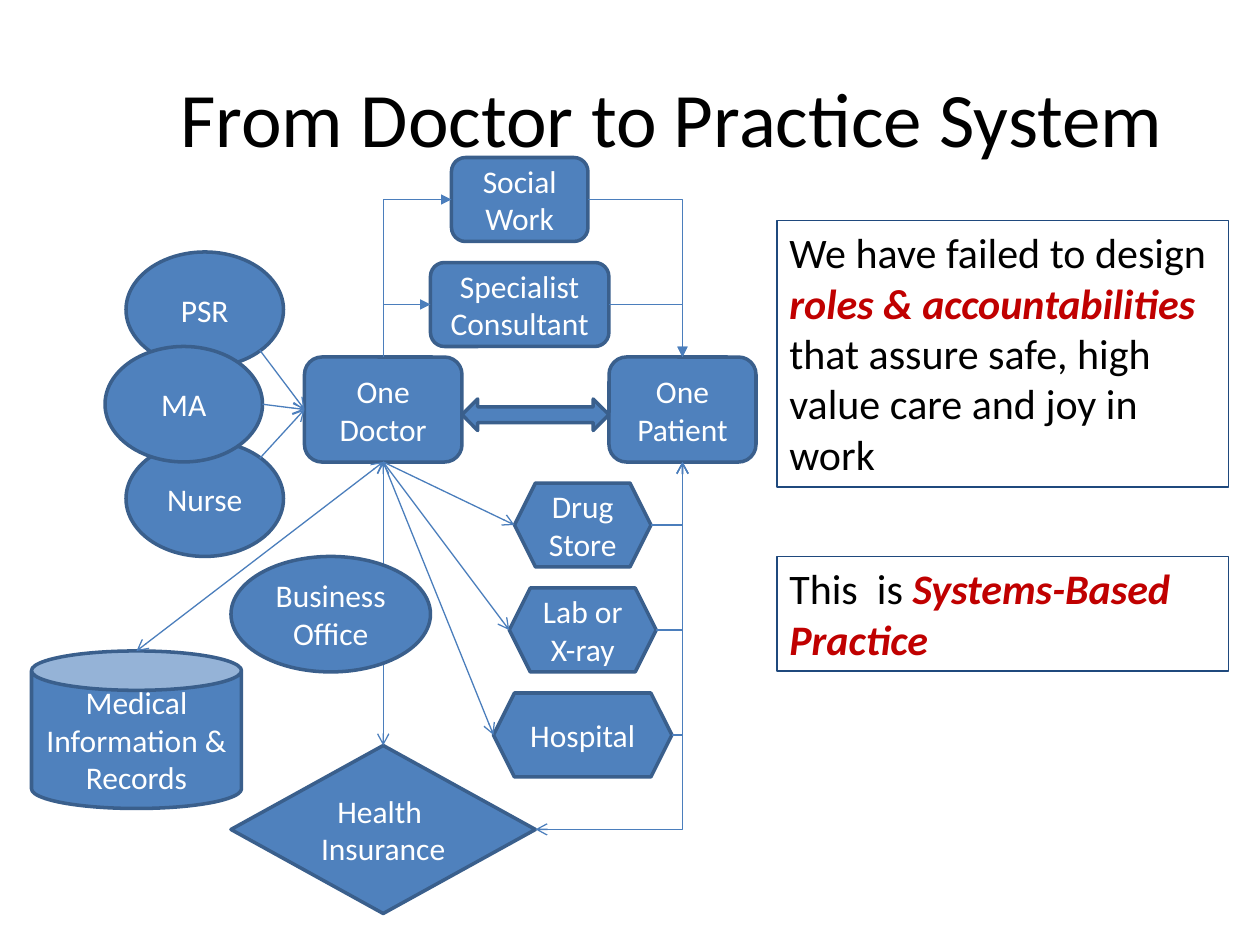
from lxml.etree import SubElement
from pptx import Presentation
from pptx.dml.color import RGBColor
from pptx.enum.shapes import MSO_CONNECTOR as Conn, MSO_SHAPE as Kind
from pptx.enum.text import MSO_ANCHOR as Anchor, PP_ALIGN as Align
from pptx.oxml.ns import qn
from pptx.util import Cm, Pt

FONT = "Calibri"
BLUE, EDGE, WIRE, NAVY = "4F81BD", "3A5F8C", "4B7EBC", "1F497D"
WHITE, BLACK, RED = "FFFFFF", "000000", "C00000"

# All places are left, top, width, height in twelfths of an inch
TITLE = ("From Doctor to Practice System", (10, 3.6, 108, 15))

NODES = {
    "One Doctor": (Kind.ROUNDED_RECTANGLE, 29, 34, 15, 10),
    "One Patient": (Kind.ROUNDED_RECTANGLE, 58, 34, 14, 10),
    "PSR": (Kind.OVAL, 12, 24, 15, 11),
    "Nurse": (Kind.OVAL, 12, 42, 15, 11),
    "MA": (Kind.OVAL, 10, 33, 15, 11),
    "Specialist Consultant": (Kind.ROUNDED_RECTANGLE, 41, 25, 17, 8),
    "Drug Store": (Kind.HEXAGON, 49, 46, 13, 8),
    "Lab or X-ray": (Kind.HEXAGON, 48.5, 56, 14, 8),
    "": (Kind.LEFT_RIGHT_ARROW, 44, 38, 14, 3),
    "Hospital": (Kind.HEXAGON, 47, 66, 17, 8),
    "Health  Insurance": (Kind.DIAMOND, 22, 71, 29, 16),
    "Medical Information & Records": (Kind.CAN, 3, 62, 20, 15),
    "Social Work": (Kind.ROUNDED_RECTANGLE, 43, 15, 13, 8),
    "Business Office": (Kind.OVAL, 22, 53, 19, 11),
}
FRONT = "Business Office"  # lies over the lines

# Side of a node as a share of its width and height
SIDES = {"left": (0, 0.5), "right": (1, 0.5), "top": (0.5, 0),
         "bottom": (0.5, 1), "upper": (0.85, 0.15), "lower": (0.85, 0.85)}

# From, side, to, side, arrowhead at start, arrowhead at end
STRAIGHT = [
    ("PSR", "lower", "One Doctor", "left", None, "arrow"),
    ("MA", "right", "One Doctor", "left", None, "arrow"),
    ("Nurse", "upper", "One Doctor", "left", None, "arrow"),
    ("One Doctor", "bottom", "Drug Store", "left", None, "arrow"),
    ("One Doctor", "bottom", "Lab or X-ray", "left", None, "arrow"),
    ("One Doctor", "bottom", "Hospital", "left", None, "arrow"),
    ("One Doctor", "bottom", "Health  Insurance", "top", "arrow", "arrow"),
    ("Medical Information & Records", "top", "One Doctor", "bottom",
     "arrow", "arrow"),
]
# These run level first, then upright
BENT = [
    ("Drug Store", "right", "One Patient", "bottom", None, "arrow"),
    ("Lab or X-ray", "right", "One Patient", "bottom", None, "arrow"),
    ("Hospital", "right", "One Patient", "bottom", None, "arrow"),
    ("Health  Insurance", "right", "One Patient", "bottom", "arrow", "arrow"),
    ("Specialist Consultant", "right", "One Patient", "top", None, "triangle"),
    ("Specialist Consultant", "left", "One Doctor", "top", "triangle", None),
    ("Social Work", "right", "One Patient", "top", None, "triangle"),
    ("Social Work", "left", "One Doctor", "top", "triangle", None),
]

# Runs are text, stressed or not
NOTES = [
    ((74, 21, 43, 25.4), [("We have failed to design ", False),
                          ("roles & accountabilities ", True),
                          ("that assure safe, high value care and joy in work",
                           False)]),
    ((74, 53, 43, 10.9), [("This  is ", False),
                          ("Systems-Based Practice", True)]),
]


def unit(n):
    return Cm(n * 2.54 / 12)


def paint(part, color):
    part.solid()
    part.fore_color.rgb = RGBColor.from_string(color)


def stroke(line, color, width):
    paint(line.fill, color)
    line.width = Pt(width)


def style(para, size, color, align):
    para.alignment = align
    para.font.name, para.font.size = FONT, Pt(size)
    para.font.color.rgb = RGBColor.from_string(color)


def text_box(place):
    box = shapes.add_textbox(*map(unit, place))
    box.text_frame.word_wrap = True
    return box


def add_node(name):
    kind, *place = NODES[name]
    node = shapes.add_shape(kind, *map(unit, place))
    node.shadow.inherit = False
    paint(node.fill, BLUE)
    stroke(node.line, EDGE, 2)
    if name:
        frame = node.text_frame
        frame.word_wrap, frame.vertical_anchor = True, Anchor.MIDDLE
        frame.text = name
        style(frame.paragraphs[0], 18, WHITE, Align.CENTER)


def point(name, side):
    _, x, y, w, h = NODES[name]
    fx, fy = SIDES[side]
    return unit(x + w * fx), unit(y + h * fy)


def add_link(link, kind):
    start, side, end, face, head, tail = link
    wire = shapes.add_connector(kind, *point(start, side), *point(end, face))
    stroke(wire.line, WIRE, 0.75)
    props = wire._element.spPr
    if kind == Conn.ELBOW:
        props.find(qn("a:prstGeom")).set("prst", "bentConnector2")
    for tag, tip in (("a:headEnd", head), ("a:tailEnd", tail)):
        if tip:
            SubElement(props.find(qn("a:ln")), qn(tag), type=tip)
    SubElement(props, qn("a:effectLst"))


deck = Presentation()
deck.slide_width, deck.slide_height = unit(120), unit(90)
shapes = deck.slides.add_slide(deck.slide_layouts[6]).shapes

# Diagram
for name in NODES:
    if name != FRONT:
        add_node(name)
for link in STRAIGHT:
    add_link(link, Conn.STRAIGHT)
for link in BENT:
    add_link(link, Conn.ELBOW)
add_node(FRONT)

# Notes on the right
for place, runs in NOTES:
    box = text_box(place)
    stroke(box.line, NAVY, 0.75)
    para = box.text_frame.paragraphs[0]
    style(para, 24, BLACK, Align.LEFT)
    for text, stress in runs:
        run = para.add_run()
        run.text = text
        if stress:
            run.font.bold = run.font.italic = True
            run.font.color.rgb = RGBColor.from_string(RED)

# Title
text, place = TITLE
frame = text_box(place).text_frame
frame.text, frame.vertical_anchor = text, Anchor.MIDDLE
style(frame.paragraphs[0], 44, BLACK, Align.CENTER)

deck.save("out.pptx")
